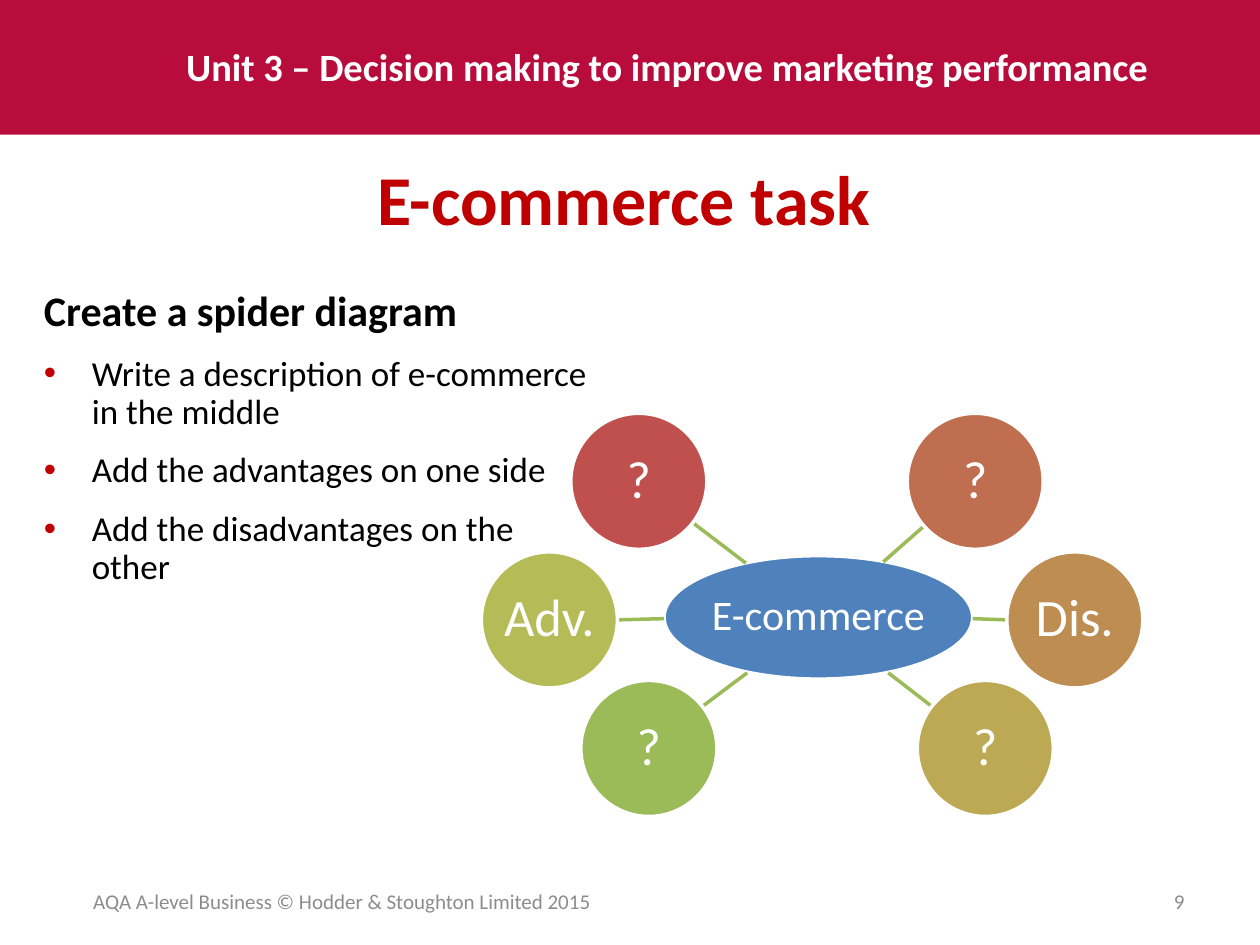
from lxml.etree import SubElement
from pptx import Presentation
from pptx.dml.color import RGBColor
from pptx.enum.shapes import MSO_CONNECTOR, MSO_SHAPE
from pptx.enum.text import MSO_ANCHOR, PP_ALIGN
from pptx.oxml.ns import qn
from pptx.util import Inches, Pt

RED, WHITE, GREY, GREEN = "C00000", "FFFFFF", "8C8C8C", "9BBB59"
BALL = 1.08
HUB = (1.45, 1.13, 2.45, 0.98)
NODES = [
    ("?", "C0504D", (0.71, 0), (2.1, 1.19, 1.68, 0.87)),
    ("?", "BF6F4F", (3.38, 0), (3.19, 1.18, 3.52, 0.89)),
    ("Dis.", "BE8D52", (4.17, 1.1), (3.9, 1.63, 4.17, 1.64)),
    ("?", "BDA954", (3.46, 2.12), (3.23, 2.06, 3.58, 2.33)),
    ("Adv.", "B5BC57", (0, 1.1), (1.45, 1.63, 1.08, 1.64)),
    ("?", GREEN, (0.79, 2.12), (2.11, 2.06, 1.75, 2.33)),
]
TASKS = [
    "Write a description of e-commerce in the middle",
    "Add the advantages on one side",
    "Add the disadvantages on the other",
]


def paint(target, hue):
    """Give a fill, line or font colour format a hex colour."""
    target.rgb = RGBColor.from_string(hue)


def assign(target, values):
    """Set each attribute named in values."""
    for name, value in values.items():
        setattr(target, name, value)


def style(para, text, size, hue, bold=False, **layout):
    """Write and format one paragraph."""
    para.text = text
    assign(para, layout)
    assign(para.font, {"name": "Calibri", "size": Pt(size), "bold": bold})
    paint(para.font.color, hue)


def label(slide, box, text, size, hue, anchor=MSO_ANCHOR.MIDDLE, **look):
    """Add a wrapped text box with one paragraph."""
    frame = slide.shapes.add_textbox(*map(Inches, box)).text_frame
    assign(frame, {"word_wrap": True, "vertical_anchor": anchor})
    style(frame.paragraphs[0], text, size, hue, **look)
    return frame


def solid(slide, kind, box, hue):
    """Add a filled shape without a shadow or line."""
    shape = slide.shapes.add_shape(kind, *map(Inches, box))
    shape.shadow.inherit = False
    shape.fill.solid()
    paint(shape.fill.fore_color, hue)
    shape.line.fill.background()
    return shape


def banner(slide, box):
    """Draw the unit band across the top."""
    left, top, width, height = box
    solid(slide, MSO_SHAPE.RECTANGLE, box, "B70C3C")
    label(slide, (left + 1.38, top + 0.29, width - 1.97, 0.47),
          "Unit 3 – Decision making to improve marketing performance",
          22, WHITE, MSO_ANCHOR.TOP, bold=True)


def bullet(para):
    """Add a red hanging bullet."""
    props = para._p.get_or_add_pPr()
    props.set("marL", str(Inches(0.38)))
    props.set("indent", str(Inches(-0.38)))
    tint = SubElement(props, qn("a:buClr"))
    SubElement(tint, qn("a:srgbClr"), val=RED)
    SubElement(props, qn("a:buFont"), typeface="Arial")
    SubElement(props, qn("a:buChar"), char="•")


def brief(slide, box):
    """Write the task heading and its bullets."""
    space = {"line_spacing": 0.9, "space_after": Pt(12)}
    frame = label(slide, box, "Create a spider diagram", 24, "000000",
                  MSO_ANCHOR.TOP, bold=True, **space)
    for task in TASKS:
        para = frame.add_paragraph()
        bullet(para)
        style(para, task, 20, "000000", **space)


def bubble(slide, box, text, size, hue):
    """Draw an outlined ellipse with a centred word."""
    shape = solid(slide, MSO_SHAPE.OVAL, box, hue)
    paint(shape.line.color, WHITE)
    shape.line.width = Pt(2)
    inset = Inches(0.02)
    assign(shape.text_frame, {
        "word_wrap": False, "vertical_anchor": MSO_ANCHOR.MIDDLE,
        "margin_left": inset, "margin_right": inset,
        "margin_top": inset, "margin_bottom": inset})
    style(shape.text_frame.paragraphs[0], text, size, WHITE,
          alignment=PP_ALIGN.CENTER, line_spacing=0.9)


def spoke(slide, ends):
    """Draw a green line between two points."""
    line = slide.shapes.add_connector(
        MSO_CONNECTOR.STRAIGHT, *map(Inches, ends))
    paint(line.line.color, GREEN)
    line.line.width = Pt(2)
    SubElement(line._element.spPr, qn("a:effectLst"))


def spider(slide, left, top):
    """Draw the hub, its spokes and the outer bubbles."""
    x, y, width, height = HUB
    bubble(slide, (left + x, top + y, width, height),
           "E-commerce", 24, "4F81BD")
    for text, hue, (x, y), (x1, y1, x2, y2) in NODES:
        spoke(slide, (left + x1, top + y1, left + x2, top + y2))
        bubble(slide, (left + x, top + y, BALL, BALL), text, 30, hue)


def footer(slide, box):
    """Write the copyright line and page number."""
    left, top, width, height = box
    label(slide, (left, top, 4.41, height),
          "AQA A-level Business © Hodder & Stoughton Limited 2015",
          12, GREY, alignment=PP_ALIGN.CENTER)
    label(slide, (left + width - 2.33, top, 2.33, height), "9",
          12, GREY, alignment=PP_ALIGN.RIGHT)


def main():
    """Build and save the slide."""
    deck = Presentation()
    assign(deck, {"slide_width": Inches(10), "slide_height": Inches(7.5)})
    slide = deck.slides.add_slide(deck.slide_layouts[6])
    banner(slide, (0, 0, 10, 1.07))
    label(slide, (0.2, 1.15, 9.5, 0.83), "E-commerce task", 40, RED,
          bold=True, alignment=PP_ALIGN.CENTER)
    brief(slide, (0.25, 2.25, 4.59, 4.75))
    spider(slide, 3.82, 3.28)
    footer(slide, (0.51, 6.95, 8.99, 0.4))
    deck.save("out.pptx")


if __name__ == "__main__":
    main()
